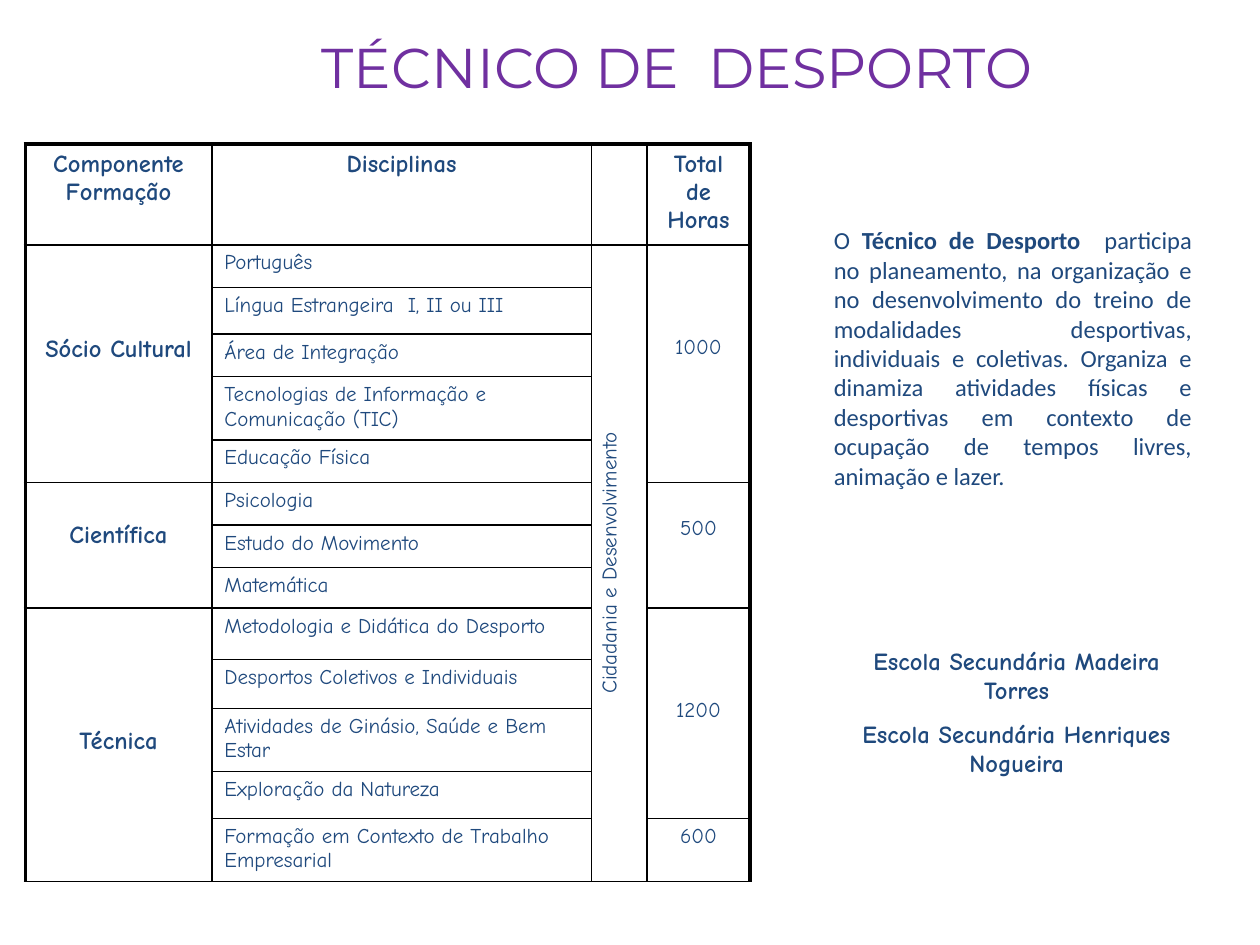
from dataclasses import dataclass

from lxml import etree
from pptx import Presentation, util as u
from pptx.dml.color import RGBColor
from pptx.enum import text
from pptx.oxml.ns import qn

HUES = {"title": "7030A0", "navy": "1F497D", "rule": "000000"}
HAND, BODY, HEAD = "Comic Neue", "Calibri", "Montserrat"
THIN, THICK = 1, 2.25
LEFT, MID, FULL = text.PP_ALIGN.LEFT, text.PP_ALIGN.CENTER, text.PP_ALIGN.JUSTIFY

COLS = (3.76, 7.65, 1.12, 2.08)
ROWS = (2.03, 0.86, 0.94, 0.86, 1.27, 0.86, 0.86, 0.86, 0.81,
        1.04, 0.99, 1.27, 0.94, 1.27)
TITLES = ("Componente Formação", "Disciplinas", "", "Total de Horas")
TOPICS = (
    "Português",
    "Língua Estrangeira  I, II ou III",
    "Área de Integração",
    "Tecnologias de Informação e Comunicação (TIC)",
    "Educação Física",
    "Psicologia",
    "Estudo do Movimento",
    "Matemática",
    "Metodologia e Didática do Desporto",
    "Desportos Coletivos e Individuais",
    "Atividades de Ginásio, Saúde e Bem Estar",
    "Exploração da Natureza",
    "Formação em Contexto de Trabalho Empresarial",
)
INTRO = (
    ("O ", False),
    ("Técnico de Desporto", True),
    ("  participa no planeamento, na organização e no desenvolvimento do "
     "treino de modalidades desportivas, individuais e coletivas. Organiza e "
     "dinamiza atividades físicas e desportivas em contexto de ocupação de "
     "tempos livres, animação e lazer.", False),
)


@dataclass
class Block:
    """A cell that covers rows first to last; top is its upper margin in cm."""
    col: int
    first: int
    last: int
    words: str
    top: float = 0.13
    size: int = 12
    bold: bool = False


@dataclass
class School:
    name: str
    gap: float


BLOCKS = (
    Block(0, 1, 5, "Sócio Cultural", 1.83, 14, True),
    Block(0, 6, 8, "Científica", 0.79, 14, True),
    Block(0, 9, 13, "Técnica", 2.41, 14, True),
    Block(2, 1, 13, "Cidadania e Desenvolvimento"),
    Block(3, 1, 5, "1000", 1.83),
    Block(3, 6, 8, "500", 0.7),
    Block(3, 9, 12, "1200", 1.83),
    Block(3, 13, 13, "600"),
)
SCHOOLS = (
    School("Escola Secundária Madeira Torres", 89),
    School("Escola Secundária Henriques Nogueira", 8),
)


def style(para, face: str, size: float, hue: str, align, bold=None) -> None:
    para.alignment = align
    font = para.font
    font.name, font.size, font.bold = face, u.Pt(size), bold
    font.color.rgb = RGBColor.from_string(HUES[hue])


def write(cell, words: str, size: int = 12, bold: bool = False, align=MID) -> None:
    cell.text = words
    style(cell.text_frame.paragraphs[0], HAND, size, "navy", align, bold)


def edge(cell, side: str, width: float) -> None:
    line = etree.SubElement(cell._tc.get_or_add_tcPr(), qn(f"a:ln{side}"),
                            w=str(u.Pt(width)))
    fill = etree.SubElement(line, qn("a:solidFill"))
    etree.SubElement(fill, qn("a:srgbClr"), val=HUES["rule"])


def frame(grid) -> None:
    """Rule every cell, with a heavy outer edge, and clear the fills."""
    end_row, end_col = len(ROWS) - 1, len(COLS) - 1
    for row in range(len(ROWS)):
        for col in range(len(COLS)):
            cell = grid.cell(row, col)
            heavy = {"L": col == 0, "R": col == end_col, "T": row == 0,
                     "B": row == end_row and col in (0, 2)}
            for side, thick in heavy.items():
                edge(cell, side, THICK if thick else THIN)
            cell.fill.background()


def add_plan(slide) -> None:
    grid = slide.shapes.add_table(
        len(ROWS), len(COLS), u.Cm(0.51), u.Cm(2.9),
        u.Cm(sum(COLS)), u.Cm(sum(ROWS))).table
    grid.first_row = grid.horz_banding = False
    for col, width in zip(grid.columns, COLS):
        col.width = u.Cm(width)
    for row, height in zip(grid.rows, ROWS):
        row.height = u.Cm(height)
    frame(grid)
    for col, words in enumerate(TITLES):
        write(grid.cell(0, col), words, 14, True)
    for row, words in enumerate(TOPICS, 1):
        write(grid.cell(row, 1), words, align=LEFT)
    for block in BLOCKS:
        cell = grid.cell(block.first, block.col)
        if block.last > block.first:
            cell.merge(grid.cell(block.last, block.col))
        write(cell, block.words, block.size, block.bold)
        cell.margin_top = u.Cm(block.top)
        if block.col == 2:
            cell._tc.get_or_add_tcPr().set("vert", "vert270")


def add_box(slide, left: float, top: float, width: float, height: float, wrap: bool):
    box = slide.shapes.add_textbox(u.Cm(left), u.Cm(top), u.Cm(width), u.Cm(height))
    box.text_frame.word_wrap = wrap
    return box.text_frame


def add_title(slide) -> None:
    para = add_box(slide, 3.71, 0.53, 19.89, 2.01, False).paragraphs[0]
    para.text = "TÉCNICO DE  DESPORTO"
    style(para, HEAD, 32, "title", MID)


def add_about(slide) -> None:
    body = add_box(slide, 15.29, 4.42, 8.99, 14, True)
    body.margin_left = u.Cm(1.52)
    para = body.paragraphs[0]
    style(para, BODY, 14, "navy", FULL)
    for words, bold in INTRO:
        run = para.add_run()
        run.text, run.font.bold = words, bold
    for school in SCHOOLS:
        para = body.add_paragraph()
        para.text = school.name
        para.space_before = u.Pt(school.gap)
        style(para, HAND, 14, "navy", MID, True)
        para._p.get_or_add_pPr().set("marL", str(u.Cm(0.15)))


def main() -> None:
    deck = Presentation()
    deck.slide_width, deck.slide_height = u.Cm(25.4), u.Cm(19.05)
    slide = deck.slides.add_slide(deck.slide_layouts[6])
    add_title(slide)
    add_plan(slide)
    add_about(slide)
    deck.save("out.pptx")


if __name__ == "__main__":
    main()
